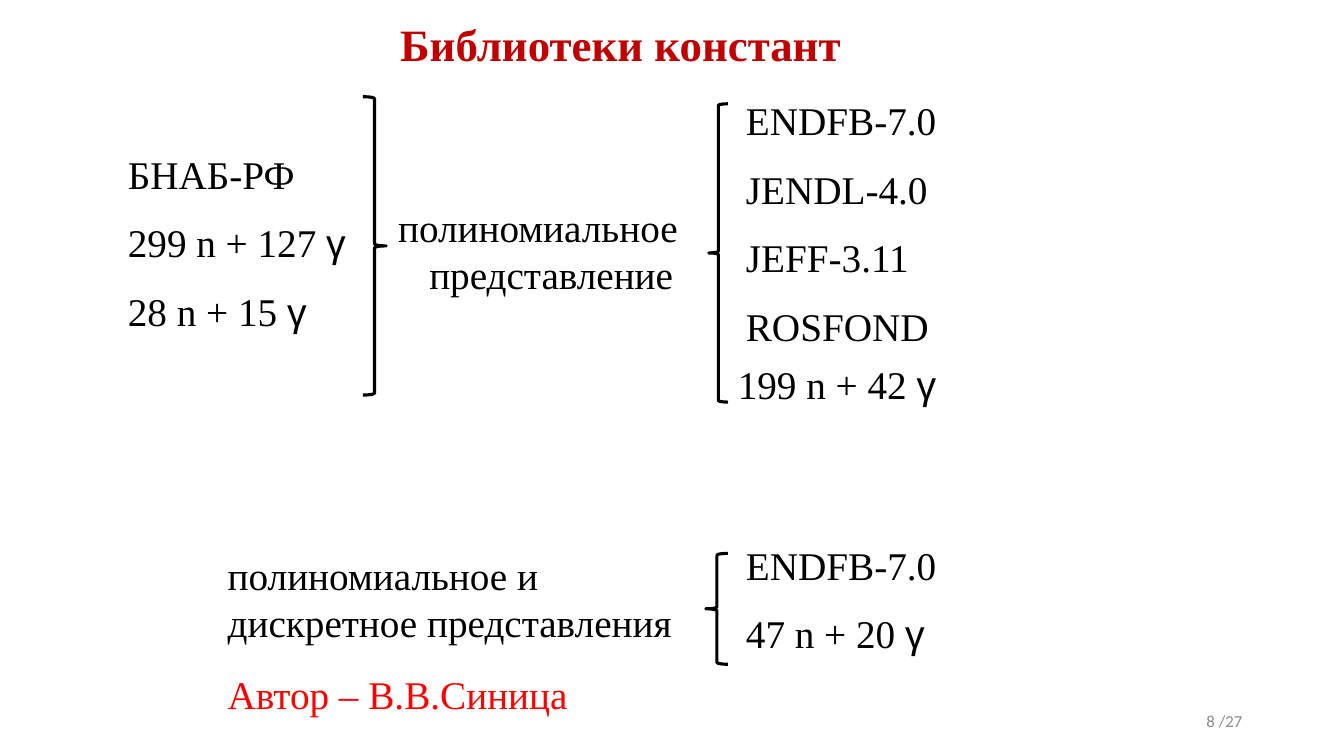
from pptx import Presentation
from pptx.dml.color import RGBColor
from pptx.enum.shapes import MSO_SHAPE
from pptx.enum.text import MSO_ANCHOR, PP_ALIGN
from pptx.util import Inches, Pt

BRACE = MSO_SHAPE.RIGHT_BRACE
TOP, MIDDLE = MSO_ANCHOR.TOP, MSO_ANCHOR.MIDDLE
LEFT, CENTER, RIGHT = PP_ALIGN.LEFT, PP_ALIGN.CENTER, PP_ALIGN.RIGHT

COLORS = {"title": "C00000", "text": "000000", "author": "FF0000", "page": "8C8C8C"}
SERIF, SANS, GREEK = "Times New Roman", "Calibri", "Arial"
GAP = 15.3  # points between list lines

# Content: box (left, top, width, height), lines
LISTS = [
    ((1.17, 1.44, 2.55, 1.98), ["БНАБ-РФ", "299 n + 127 γ", "28 n + 15 γ"]),
    ((7.3, 0.91, 2.13, 2.69), ["ENDFB-7.0", "JENDL-4.0", "JEFF-3.11", "ROSFOND"]),
    ((7.22, 3.53, 2.2, 0.57), ["199 n + 42 γ"]),
    ((7.3, 5.32, 2.55, 1.28), ["ENDFB-7.0", "47 n + 20 γ"]),
    ((2.16, 5.42, 4.81, 1.04), ["полиномиальное и дискретное представления"]),
]
TITLE = ((3.47, 0.19, 5.37, 0.55), ["Библиотеки констант"])
METHOD = ((3.35, 1.97, 3.67, 1.05), ["полиномиальное представление"])
AUTHOR = ((2.16, 6.6, 3.62, 0.57), ["Автор – В.В.Синица"])
PAGE = ((9.42, 6.95, 3, 0.4), ["8 /27"])

# Braces: box, opens to the right
BRACES = [
    ((3.6, 0.96, 0.23, 2.96), False),
    ((7.03, 1.03, 0.19, 2.96), True),
    ((7, 5.49, 0.22, 1.1), True),
]

prs = Presentation()
prs.slide_width, prs.slide_height = Inches(13.33), Inches(7.5)
slide = prs.slides.add_slide(prs.slide_layouts[6])


def add_run(para, text, font, size, color, bold):
    run = para.add_run()
    run.text = text
    run.font.name = font
    run.font.size = Pt(size)
    run.font.bold = bold
    run.font.color.rgb = RGBColor.from_string(COLORS[color])


def add_text(box, lines, color="text", size=28, font=SERIF, bold=False,
             align=LEFT, anchor=TOP):
    frame = slide.shapes.add_textbox(*map(Inches, box)).text_frame
    frame.word_wrap = True
    frame.vertical_anchor = anchor
    for i, line in enumerate(lines):
        para = frame.add_paragraph() if i else frame.paragraphs[0]
        para.alignment = align
        para.space_before = Pt(GAP if i else 0)
        main, gamma, _ = line.partition("γ")
        add_run(para, main, font, size, color, bold)
        if gamma:
            add_run(para, gamma, GREEK, size, color, bold)
    return frame


# Title
title = add_text(*TITLE, color="title", size=32, bold=True, align=CENTER, anchor=MIDDLE)
title.paragraphs[0].line_spacing = 0.9

# Libraries and representations
for box, lines in LISTS:
    add_text(box, lines)

# Hanging indent of the method label
props = add_text(*METHOD).paragraphs[0]._p.get_or_add_pPr()
props.set("marL", str(Inches(0.81)))
props.set("indent", str(Inches(-0.31)))

# Braces
for box, flip in BRACES:
    brace = slide.shapes.add_shape(BRACE, *map(Inches, box))
    brace.shadow.inherit = False
    brace.adjustments[0] = 0.08
    brace.fill.background()
    brace.line.color.rgb = RGBColor.from_string(COLORS["text"])
    brace.line.width = Pt(2.25)
    if flip:
        brace._element.spPr.xfrm.set("flipH", "1")

# Author and page number
add_text(*AUTHOR, color="author")
add_text(*PAGE, color="page", size=12, font=SANS, align=RIGHT, anchor=MIDDLE)

prs.save("out.pptx")
